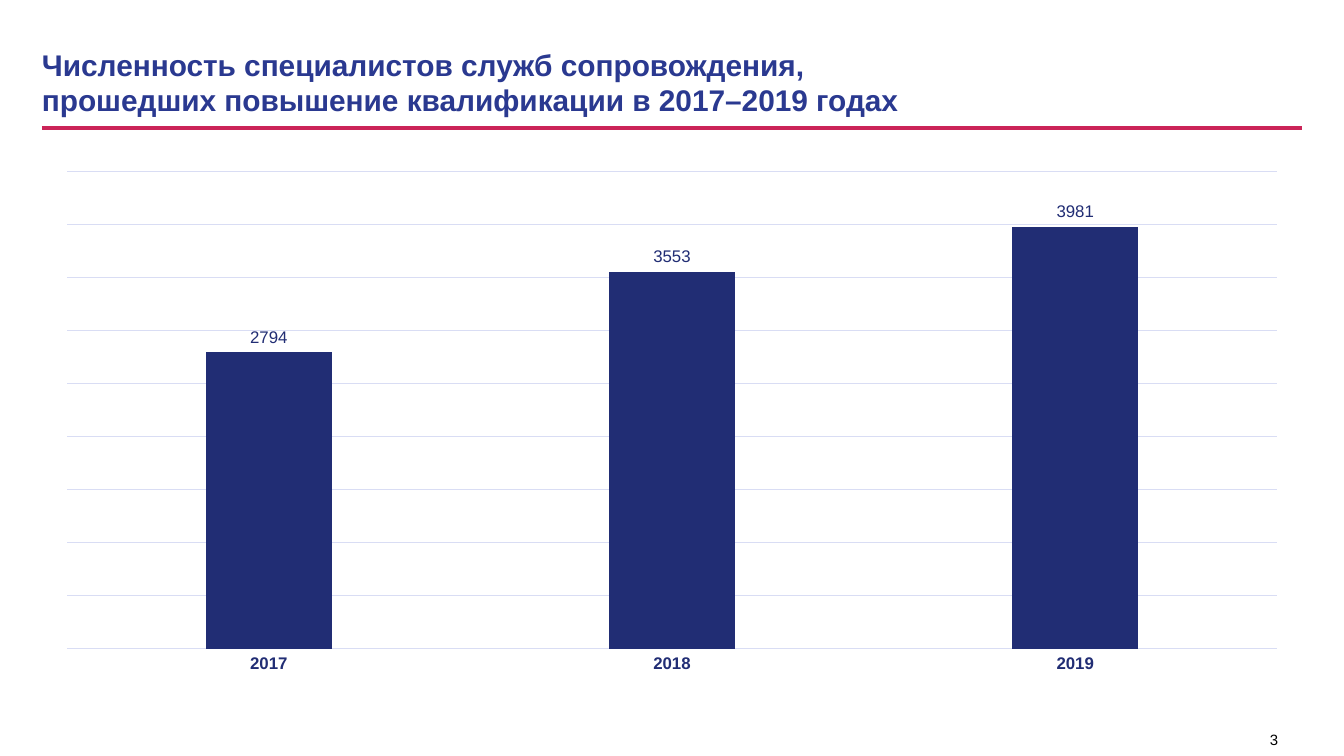
import pptx
import pptx.chart.data
import pptx.dml.color
import pptx.enum.chart
import pptx.enum.shapes
import pptx.enum.text
import pptx.oxml
import pptx.oxml.ns
import pptx.util
from lxml import etree

Pt = pptx.util.Pt
RGBColor = pptx.dml.color.RGBColor

TITLE = ["Численность специалистов служб сопровождения,",
         "прошедших повышение квалификации в 2017–2019 годах"]
SPECIALISTS = {"2017": 2794, "2018": 3553, "2019": 3981}
PAGE = "3"

FONT = "Arial"
BLUE = RGBColor(0x2A, 0x39, 0x90)
NAVY = RGBColor(0x21, 0x2D, 0x74)
GRID = RGBColor(0xD9, 0xDD, 0xF4)
CRIMSON = RGBColor(0xCB, 0x24, 0x58)
BLACK = RGBColor(0, 0, 0)

LEFT, RIGHT = 22.5, 697.5
PLOT = {"x": 0.02, "y": 0.02, "w": 0.96, "h": 0.91}


def style(font, size, color, bold=False):
    font.name = FONT
    font.size = Pt(size)
    font.bold = bold
    font.color.rgb = color


def add_text(slide, box, lines, size, color, bold=False):
    tf = slide.shapes.add_textbox(*map(Pt, box)).text_frame
    p = tf.paragraphs[0]
    for i, line in enumerate(lines):
        if i:
            p.add_line_break()
        r = p.add_run()
        r.text = line
        style(r.font, size, color, bold)
    return tf


def set_plot_layout(chart):
    """Fix the inner plot area as fractions of the chart frame."""
    area = chart._chartSpace.chart.plotArea
    for old in area.findall(pptx.oxml.ns.qn("c:layout")):
        area.remove(old)
    layout = etree.Element(pptx.oxml.ns.qn("c:layout"))
    manual = etree.SubElement(layout, pptx.oxml.ns.qn("c:manualLayout"))
    settings = {"layoutTarget": "inner", "xMode": "edge", "yMode": "edge", **PLOT}
    for tag, val in settings.items():
        etree.SubElement(manual, pptx.oxml.ns.qn("c:" + tag)).set("val", str(val))
    area.insert(0, layout)


def add_column_chart(slide):
    data = pptx.chart.data.CategoryChartData()
    data.categories = list(SPECIALISTS)
    data.add_series("Series 1", list(SPECIALISTS.values()))
    chart = slide.shapes.add_chart(
        pptx.enum.chart.XL_CHART_TYPE.COLUMN_CLUSTERED,
        Pt(LEFT), Pt(86.4), Pt(RIGHT - LEFT), Pt(280.8), data).chart
    chart.has_title = chart.has_legend = False
    style(chart.font, 10, BLUE)
    set_plot_layout(chart)

    cat = chart.category_axis
    cat.major_tick_mark = pptx.enum.chart.XL_TICK_MARK.NONE
    style(cat.tick_labels.font, 9, NAVY, True)
    val = chart.value_axis
    val.visible = False
    val.minimum_scale, val.maximum_scale, val.major_unit = 0, 4500, 500
    val.has_major_gridlines = True
    for line in (cat.format.line, val.major_gridlines.format.line):
        line.color.rgb = GRID
        line.width = Pt(0.75)

    plot = chart.plots[0]
    plot.vary_by_categories = False
    plot.gap_width, plot.overlap = 219, -27
    series = plot.series[0]
    series.format.fill.solid()
    series.format.fill.fore_color.rgb = NAVY
    labels = series.data_labels
    labels.show_value = True
    labels.position = pptx.enum.chart.XL_LABEL_POSITION.OUTSIDE_END
    style(labels.font, 9, NAVY)


prs = pptx.Presentation()
prs.slide_width, prs.slide_height = Pt(720), Pt(405)
s = prs.slides.add_slide(prs.slide_layouts[6])

tf = add_text(s, (673.2, 388, 24.5, 17.3), [PAGE], 8, BLACK)
tf.word_wrap = False

rule = s.shapes.add_connector(pptx.enum.shapes.MSO_CONNECTOR.STRAIGHT,
                              Pt(LEFT), Pt(68.6), Pt(RIGHT), Pt(68.6))
rule.line.color.rgb = CRIMSON
rule.line.width = Pt(2)
etree.SubElement(rule._element.spPr, pptx.oxml.ns.qn("a:effectLst"))

tf = add_text(s, (LEFT, 20.2, 630.7, 47.5), TITLE, 16, BLUE, True)
tf.word_wrap = True
tf.vertical_anchor = pptx.enum.text.MSO_ANCHOR.MIDDLE
tf.margin_left = tf.margin_right = tf.margin_top = tf.margin_bottom = 0

add_column_chart(s)

prs.save("out.pptx")
